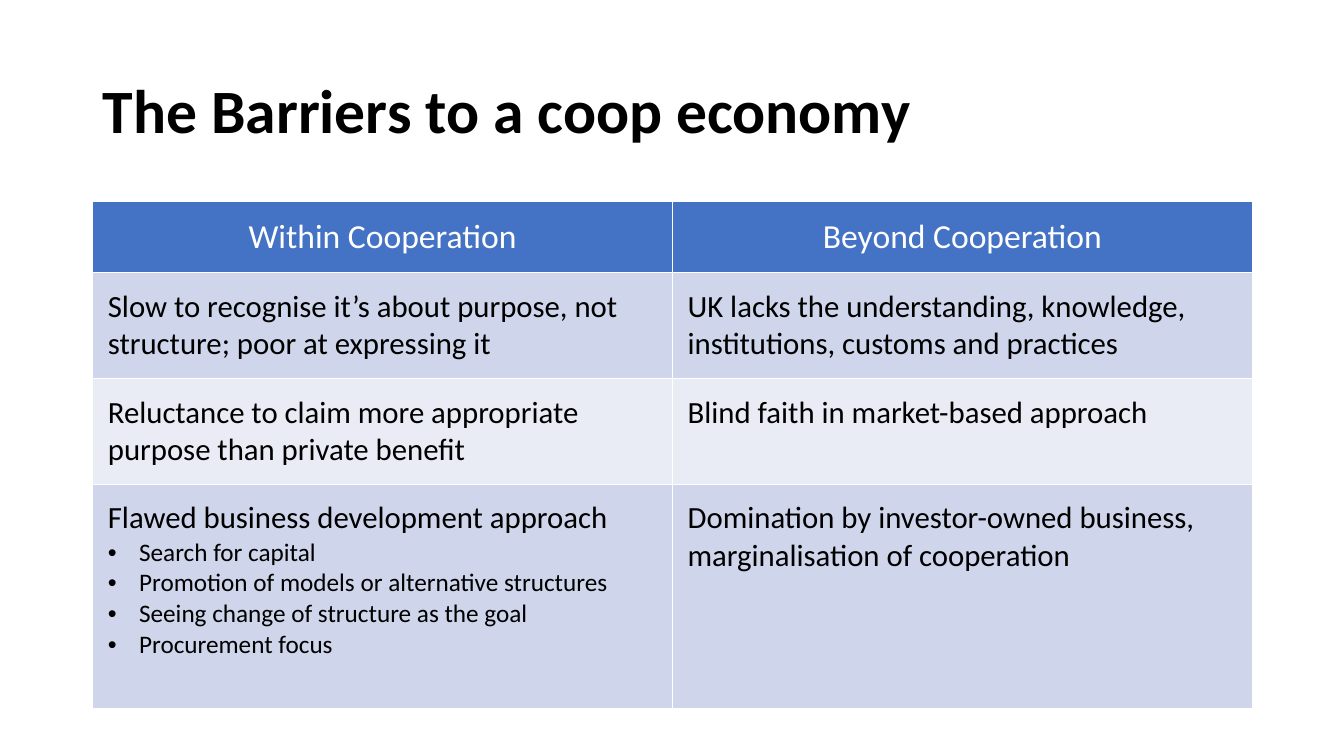
from dataclasses import dataclass

from lxml import etree
from pptx import Presentation
from pptx import util as u
from pptx.dml.color import RGBColor
from pptx.enum import text
from pptx.oxml.ns import qn


@dataclass
class Theme:
    face: str = "Calibri"
    ink: str = "000000"
    white: str = "FFFFFF"
    head: str = "4472C4"
    bands: tuple = ("CFD5EA", "E9EBF5")
    title: int = 44
    label: int = 24
    body: int = 22
    point: int = 18


theme = Theme()


def style(para, size, color, bold=False, align=text.PP_ALIGN.LEFT):
    para.alignment = align
    font = para.runs[0].font
    look = {"name": theme.face, "size": u.Pt(size), "bold": bold}
    for key, value in look.items():
        setattr(font, key, value)
    font.color.rgb = RGBColor.from_string(color)


def bullet(para):
    props = para._p.get_or_add_pPr()
    props.set("marL", str(u.Inches(0.31)))
    props.set("indent", str(u.Inches(-0.31)))
    etree.SubElement(props, qn("a:buFont")).set("typeface", "Arial")
    etree.SubElement(props, qn("a:buChar")).set("char", "•")


deck = Presentation()
deck.slide_width, deck.slide_height = u.Inches(13.33), u.Inches(7.5)
slide = deck.slides.add_slide(deck.slide_layouts[5])

title = slide.shapes.title
place = {"left": 0.92, "top": 0.4, "width": 11.5, "height": 1.45}
for key, value in place.items():
    setattr(title, key, u.Inches(value))
frame = title.text_frame
frame.text = "The Barriers to a coop economy"
frame.vertical_anchor = text.MSO_ANCHOR.MIDDLE
frame.paragraphs[0].line_spacing = 0.9
style(frame.paragraphs[0], theme.title, theme.ink, bold=True)

rows = [
    (["Within Cooperation"], ["Beyond Cooperation"]),
    (["Slow to recognise it’s about purpose, not structure; poor at expressing it"],
     ["UK lacks the understanding, knowledge, institutions, customs and practices"]),
    (["Reluctance to claim more appropriate purpose than private benefit"],
     ["Blind faith in market-based approach"]),
    (["Flawed business development approach",
      "Search for capital",
      "Promotion of models or alternative structures",
      "Seeing change of structure as the goal",
      "Procurement focus"],
     ["Domination by investor-owned business, marginalisation of cooperation"]),
]
heights = [0.7, 1.05, 1.05, 2.22]
table = slide.shapes.add_table(
    len(rows), 2, u.Inches(0.92), u.Inches(2), u.Inches(11.5), u.Inches(sum(heights))
).table

for r, (row, height) in enumerate(zip(rows, heights)):
    table.rows[r].height = u.Inches(height)
    for c, lines in enumerate(row):
        cell = table.cell(r, c)
        for side in ("left", "top", "right", "bottom"):
            setattr(cell, f"margin_{side}", u.Inches(0.15))
        fill = theme.bands[(r - 1) % 2] if r else theme.head
        cell.fill.solid()
        cell.fill.fore_color.rgb = RGBColor.from_string(fill)
        cell.text_frame.text = "\n".join(lines)
        for n, para in enumerate(cell.text_frame.paragraphs):
            if r == 0:
                style(para, theme.label, theme.white, align=text.PP_ALIGN.CENTER)
            elif n == 0:
                style(para, theme.body, theme.ink)
            else:
                style(para, theme.point, theme.ink)
                bullet(para)

deck.save("out.pptx")
